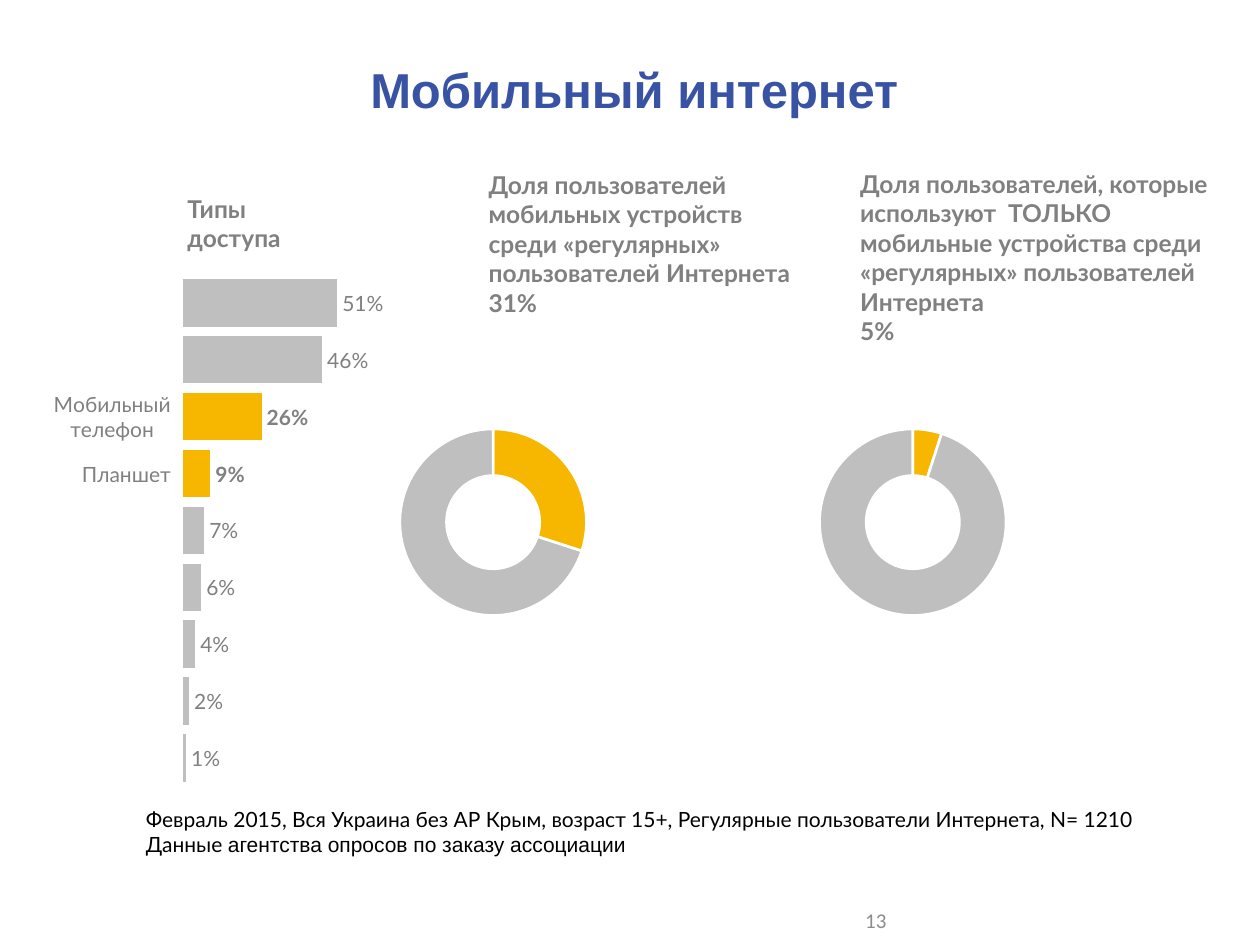
import pptx
import pptx.chart.data
import pptx.dml.color
import pptx.enum.chart
import pptx.enum.text
import pptx.oxml
import pptx.util
from pptx.util import Cm, Pt

GREY, SILVER, GOLD = "808080", "BFBFBF", "F7B600"
WHITE, BLACK, BLUE = "FFFFFF", "000000", "3953A4"
CHART_NS = "http://schemas.openxmlformats.org/drawingml/2006/chart"

# Boxes are left, top, width, height in centimetres
TITLE = ("Мобильный интернет", (7.21, 1.07, 12.29, 1.45))
HEADINGS = [
    ("Типы доступа", (3.53, 3.78, 3.23, 1.45)),
    ("Доля пользователей мобильных устройств среди «регулярных» "
     "пользователей Интернета\n31%", (9.6, 3.3, 6.6, 3.84)),
    ("Доля пользователей, которые используют  ТОЛЬКО мобильные устройства "
     "среди «регулярных» пользователей  Интернета\n5%",
     (17.09, 3.28, 7.67, 4.45)),
]
ACCESS = [("", 0.51), ("", 0.46), ("Мобильный телефон", 0.26),
          ("Планшет", 0.09), ("", 0.07), ("", 0.06), ("", 0.04),
          ("", 0.02), ("", 0.01)]
ACCESS_BOX = (-0.05, 5.33, 9.75, 10.74)
ACCESS_PLOT = (0.384, 0.019, 0.5, 0.961)
MOBILE_ROWS = (2, 3)
RINGS = [(30, 7.59), (5, 16.05)]  # share in percent, left edge
RING_TOP, RING_WIDTH, RING_HEIGHT = 7.04, 6.3, 6.48
RING_PLOT = (0.075, 0.153, 0.597, 0.771)
SOURCE = ("Февраль 2015, Вся Украина без АР Крым, возраст 15+, "
          "Регулярные пользователи Интернета, N= 1210\n"
          "Данные агентства опросов по заказу ассоциации")
SOURCE_BOX = (2.69, 16.13, 22.45, 1.27)
PAGE = ("13", (13.67, 18.29, 4.45, 0.53))


def rgb(value):
    return pptx.dml.color.RGBColor.from_string(value)


def paint(fill, color):
    fill.solid()
    fill.fore_color.rgb = rgb(color)


def style(font, name, size, color, bold=False):
    font.name, font.size, font.bold = name, Pt(size), bold
    font.color.rgb = rgb(color)


def place(shape, box):
    shape.left, shape.top, shape.width, shape.height = map(Cm, box)


def add_text(s, text, box, *font):
    tf = s.shapes.add_textbox(*map(Cm, box)).text_frame
    tf.word_wrap = True
    tf.text = text
    for p in tf.paragraphs:
        for r in p.runs:
            style(r.font, *font)
    return tf


def set_plot(chart, fractions):
    """Fix the inner plot area as fractions of the chart frame."""
    area = chart._chartSpace.chart.plotArea
    for old in area.findall(f"{{{CHART_NS}}}layout"):
        area.remove(old)
    sizes = "".join(f'<c:{tag} val="{v}"/>'
                    for tag, v in zip("xywh", fractions))
    area.insert(0, pptx.oxml.parse_xml(
        f'<c:layout xmlns:c="{CHART_NS}"><c:manualLayout>'
        '<c:layoutTarget val="inner"/><c:xMode val="edge"/>'
        f'<c:yMode val="edge"/>{sizes}</c:manualLayout></c:layout>'))


def add_chart(s, kind, categories, values, box, plot, number_format):
    data = pptx.chart.data.CategoryChartData(number_format=number_format)
    data.categories = categories
    data.add_series("Series 1", values)
    chart = s.shapes.add_chart(kind, *map(Cm, box), data).chart
    chart.has_title = chart.has_legend = False
    set_plot(chart, plot)
    return chart


def add_access_chart(s):
    enum = pptx.enum.chart
    names, values = zip(*ACCESS)
    chart = add_chart(s, enum.XL_CHART_TYPE.BAR_CLUSTERED, names, values,
                      ACCESS_BOX, ACCESS_PLOT, "0%")
    style(chart.font, "Arial", 11, BLACK)
    axis = chart.category_axis
    axis.reverse_order = True
    axis.tick_label_position = enum.XL_TICK_LABEL_POSITION.LOW
    axis.format.line.fill.background()
    style(axis.tick_labels.font, "Lato", 12, GREY)
    scale = chart.value_axis
    scale.minimum_scale, scale.maximum_scale = 0, 0.8
    scale.has_major_gridlines = scale.visible = False

    bars = chart.plots[0]
    bars.gap_width, bars.vary_by_categories = 20, False
    series = bars.series[0]
    paint(series.format.fill, SILVER)
    labels = series.data_labels
    labels.show_value = True
    labels.number_format, labels.number_format_is_linked = "0%", False
    labels.position = enum.XL_LABEL_POSITION.OUTSIDE_END
    style(labels.font, "Lato", 12, GREY)
    for row in MOBILE_ROWS:
        point = series.points[row]
        paint(point.format.fill, GOLD)
        style(point.data_label.font, "Lato", 12, GREY, True)
        point.data_label.position = enum.XL_LABEL_POSITION.OUTSIDE_END


def add_ring(s, share, left):
    chart = add_chart(s, pptx.enum.chart.XL_CHART_TYPE.DOUGHNUT, ("1", "2"),
                      (share, 100 - share),
                      (left, RING_TOP, RING_WIDTH, RING_HEIGHT),
                      RING_PLOT, "General")
    style(chart.font, "Calibri", 18, BLACK)
    ring = chart.plots[0]
    ring.has_data_labels = False
    for hole in chart._chartSpace.iter(f"{{{CHART_NS}}}holeSize"):
        hole.set("val", "53")
    for i, color in enumerate((GOLD, SILVER)):
        part = ring.series[0].points[i].format
        paint(part.fill, color)
        paint(part.line.fill, WHITE)
        part.line.width = Pt(1.5)


def main():
    prs = pptx.Presentation()
    prs.slide_width, prs.slide_height = Cm(25.4), Cm(19.05)
    s = prs.slides.add_slide(prs.slide_layouts[5])
    text, box = TITLE
    title = s.shapes.title
    place(title, box)
    tf = title.text_frame
    tf.text = text
    tf.word_wrap = True
    tf.vertical_anchor = pptx.enum.text.MSO_ANCHOR.MIDDLE
    tf.paragraphs[0].alignment = pptx.enum.text.PP_ALIGN.LEFT
    style(tf.paragraphs[0].runs[0].font, "Arial", 28, BLUE, True)

    add_access_chart(s)
    source = add_text(s, SOURCE, SOURCE_BOX, "Lato", 12, BLACK)
    last = source.paragraphs[1]
    lead, rest = last.text.split(" ", 1)
    last.runs[0].text = lead + " "
    r = last.add_run()
    r.text = rest
    style(r.font, "Arial", 12, BLACK)
    for share, left in RINGS:
        add_ring(s, share, left)
    for text, box in HEADINGS:
        add_text(s, text, box, "Lato", 14, GREY, True)

    page = add_text(s, *PAGE, "Calibri", 12, "8C8C8C")
    page.vertical_anchor = pptx.enum.text.MSO_ANCHOR.MIDDLE
    page.paragraphs[0].alignment = pptx.enum.text.PP_ALIGN.RIGHT
    prs.save("out.pptx")


if __name__ == "__main__":
    main()
